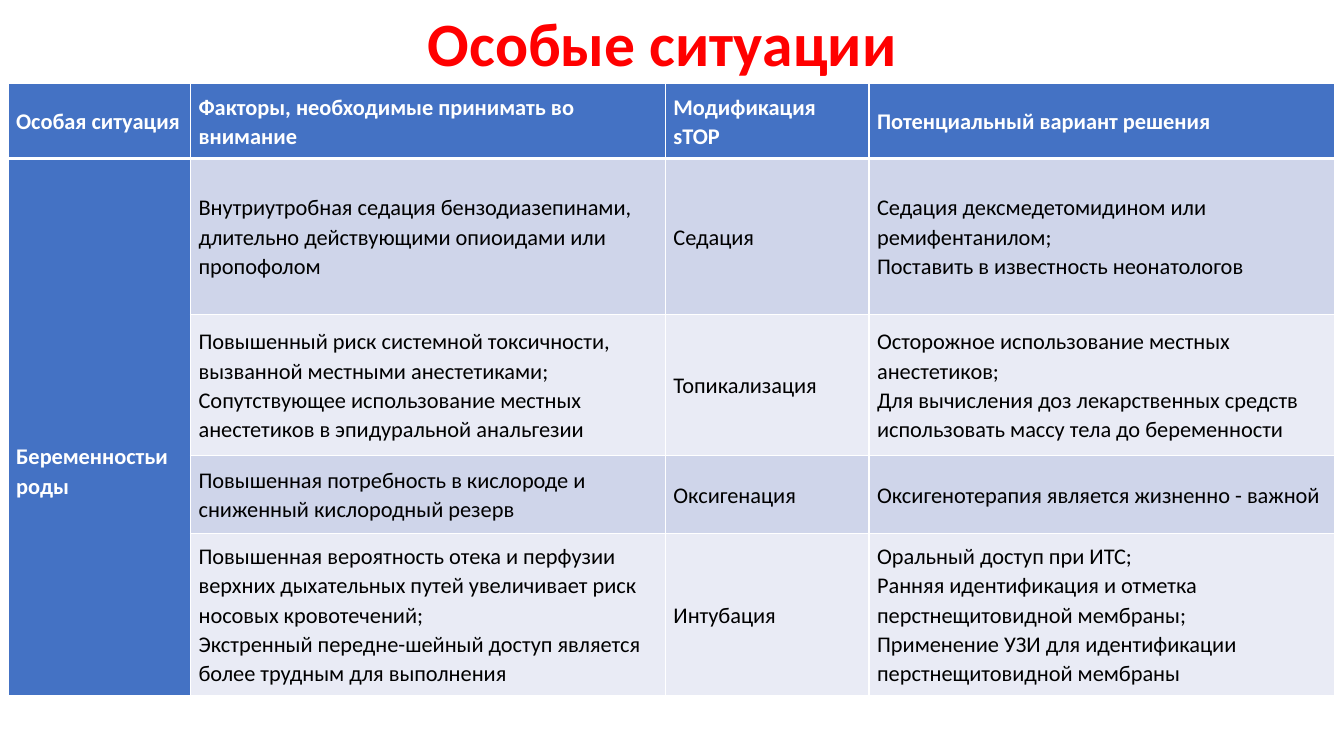
from lxml.etree import SubElement
from pptx import Presentation
from pptx.dml.color import RGBColor
from pptx.enum.text import MSO_ANCHOR, PP_ALIGN
from pptx.oxml.ns import qn
from pptx.util import Inches, Pt

FONT = "Calibri"
WHITE, BLACK, RED = "FFFFFF", "000000", "FF0000"
BLUE, BANDS = "4472C4", ("CFD5EA", "E9EBF5")
COL_WIDTHS = (1.81, 4.71, 2.02, 4.62)
ROW_HEIGHTS = (0.73, 1.55, 1.4, 0.77, 1.61)
INSET = 0.08

HEADERS = ("Особая ситуация", "Факторы, необходимые принимать во внимание",
           "Модификация sTOP", "Потенциальный вариант решения")
SITUATION = "Беременностьи роды"
# Factors, modification and solution; each line is a paragraph
ROWS = (
    ("Внутриутробная седация бензодиазепинами, длительно действующими опиоидами или пропофолом",
     "Седация",
     "Седация дексмедетомидином или ремифентанилом;\n"
     "Поставить в известность неонатологов"),
    ("Повышенный риск системной токсичности, вызванной местными анестетиками;\n"
     "Сопутствующее использование местных анестетиков в эпидуральной анальгезии",
     "Топикализация",
     "Осторожное использование местных анестетиков;\n"
     "Для вычисления доз лекарственных средств использовать массу тела до беременности"),
    ("Повышенная потребность в кислороде и сниженный кислородный резерв",
     "Оксигенация",
     "Оксигенотерапия является жизненно - важной"),
    ("Повышенная вероятность отека и перфузии верхних дыхательных путей увеличивает риск "
     "носовых кровотечений;\n"
     "Экстренный передне-шейный доступ является более трудным для выполнения",
     "Интубация",
     "Оральный доступ при ИТС;\n"
     "Ранняя идентификация и отметка перстнещитовидной мембраны;\n"
     "Применение УЗИ для идентификации перстнещитовидной мембраны"),
)


def rgb(color):
    return RGBColor.from_string(color)


def add_text(tf, text, size, color, bold, spacing, align):
    for i, line in enumerate(text.split("\n")):
        p = tf.paragraphs[0] if i == 0 else tf.add_paragraph()
        p.alignment, p.line_spacing = align, spacing
        r = p.add_run()
        r.text = line
        r.font.name, r.font.size, r.font.bold = FONT, Pt(size), bold
        r.font.color.rgb = rgb(color)


def set_borders(cell, top, bottom):
    """White borders; they must precede the fill in the cell properties."""
    tc_pr = cell._tc.get_or_add_tcPr()
    for side, width in (("L", 1), ("R", 1), ("T", top), ("B", bottom)):
        ln = SubElement(tc_pr, qn(f"a:ln{side}"), w=str(Pt(width)))
        SubElement(SubElement(ln, qn("a:solidFill")), qn("a:srgbClr"), val=WHITE)


def format_cell(cell, row, fill):
    set_borders(cell, 3 if row == 1 else 1, 3 if row == 0 else 1)
    cell.fill.solid()
    cell.fill.fore_color.rgb = rgb(fill)
    cell.vertical_anchor = MSO_ANCHOR.MIDDLE
    cell.margin_left = cell.margin_right = Inches(INSET)
    cell.margin_top = cell.margin_bottom = Inches(INSET)


def add_title(slide, left, top, width, height):
    sp = slide.shapes.title
    sp.left, sp.top, sp.width, sp.height = map(Inches, (left, top, width, height))
    tf = sp.text_frame
    tf.word_wrap = True
    tf.vertical_anchor = MSO_ANCHOR.TOP
    add_text(tf, "Особые ситуации", 44, RED, True, 0.9, PP_ALIGN.CENTER)


def add_situation_table(slide, left, top):
    frame = slide.shapes.add_table(
        len(ROW_HEIGHTS), len(COL_WIDTHS), Inches(left), Inches(top),
        Inches(sum(COL_WIDTHS)), Inches(sum(ROW_HEIGHTS)))
    table = frame.table
    table.first_col = True
    for column, width in zip(table.columns, COL_WIDTHS):
        column.width = Inches(width)
    for row, height in zip(table.rows, ROW_HEIGHTS):
        row.height = Inches(height)

    # Header row, then banded rows beside the blue first column
    texts = [HEADERS] + [(SITUATION if i == 0 else "",) + row for i, row in enumerate(ROWS)]
    for i, row in enumerate(texts):
        for j, text in enumerate(row):
            heading = i == 0 or j == 0
            cell = table.cell(i, j)
            format_cell(cell, i, BLUE if heading else BANDS[(i - 1) % 2])
            if text:
                add_text(cell.text_frame, text, 16, WHITE if heading else BLACK,
                         heading, 1.07, PP_ALIGN.LEFT)

    # One situation spans all rows, its label set below the middle
    situation = table.cell(1, 0)
    situation.merge(table.cell(len(ROWS), 0))
    situation.margin_top = Inches(0.95)


def main():
    prs = Presentation()
    prs.slide_width, prs.slide_height = Inches(13.33), Inches(7.5)
    slide = prs.slides.add_slide(prs.slide_layouts[5])
    add_title(slide, 0.82, 0.08, 11.5, 1.45)
    add_situation_table(slide, 0.08, 0.83)
    prs.save("out.pptx")


if __name__ == "__main__":
    main()
